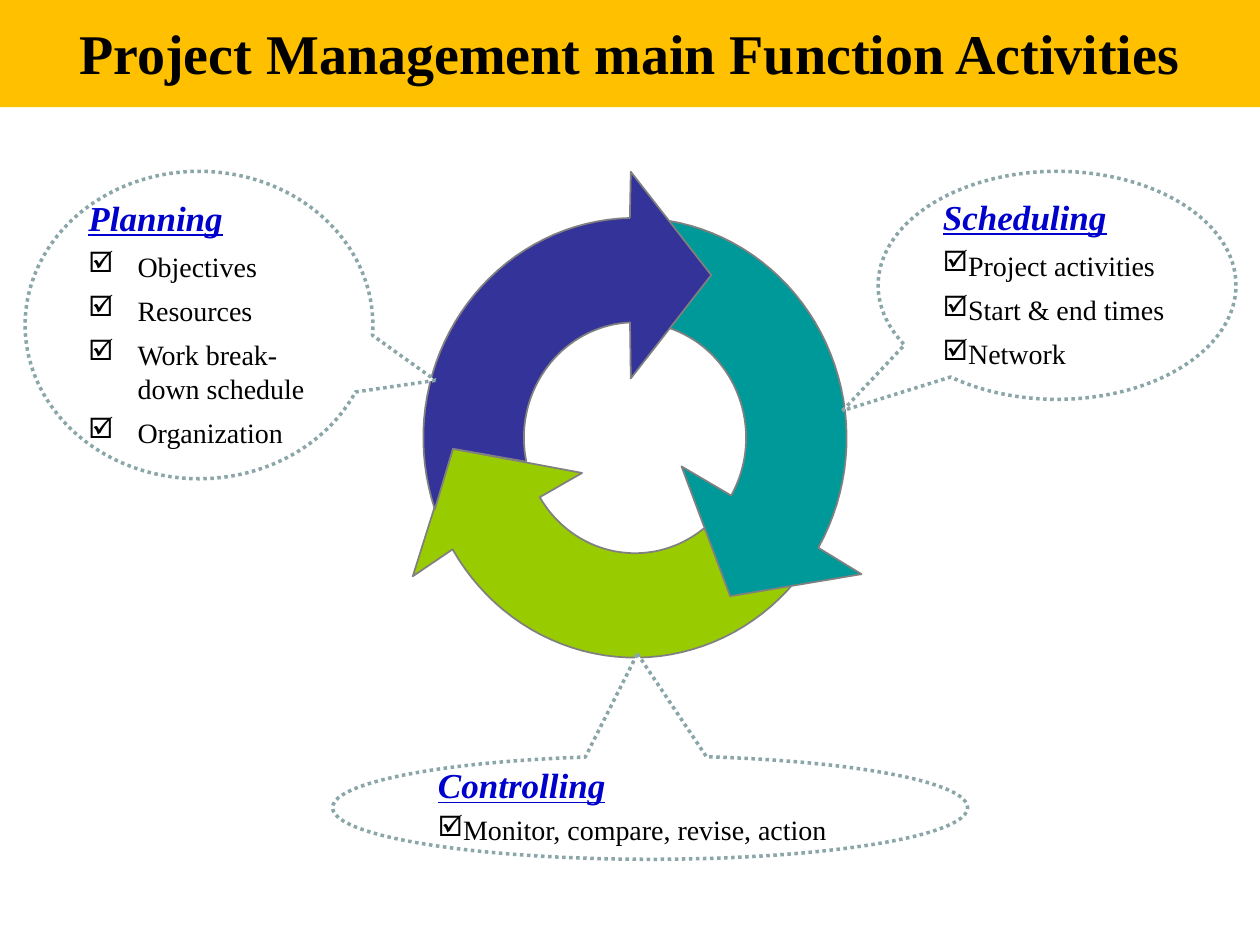
import math
import pptx
import pptx.util
import pptx.dml.color
import pptx.enum.dml
import pptx.enum.shapes
import pptx.enum.text
import pptx.oxml.ns
import lxml.etree

# Grid of 100 columns by 75 rows
CELL = pptx.util.Inches(0.1)
FONT = "Times New Roman"
HEADING = dict(name=FONT, size=pptx.util.Pt(20), bold=True, italic=True, underline=True)
ITEM = dict(name=FONT, size=pptx.util.Pt(16), bold=False, italic=False, underline=False)
TITLE = dict(name=FONT, size=pptx.util.Pt(32), bold=True)
INNER = 0.525  # radius of the hole as a share of the ring's radius


def rgb(value):
    return pptx.dml.color.RGBColor.from_string(value)


def grid(*cells):
    return [round(c * CELL) for c in cells]


def paint(sp, fill, line, width):
    sp.shadow.inherit = False
    sp.fill.solid()
    sp.fill.fore_color.rgb = rgb(fill)
    sp.line.color.rgb = rgb(line)
    sp.line.width = pptx.util.Pt(width)


def format_font(font, values, color):
    for name, value in values.items():
        setattr(font, name, value)
    font.color.rgb = rgb(color)


def set_indent(p, columns, bullet=None):
    pPr = p._p.get_or_add_pPr()
    pPr.set("marL", str(grid(columns)[0]))
    pPr.set("indent", str(grid(-columns)[0]))
    if bullet:
        qn = pptx.oxml.ns.qn
        color = lxml.etree.SubElement(pPr, qn("a:buClr"))
        lxml.etree.SubElement(color, qn("a:srgbClr"), val="000000")
        lxml.etree.SubElement(pPr, qn("a:buChar"), char=bullet)


def add_title(s, box, text):
    sp = s.shapes.title
    sp.left, sp.top, sp.width, sp.height = grid(*box)
    sp.fill.solid()
    sp.fill.fore_color.rgb = rgb("FFC000")
    tf = sp.text_frame
    tf.auto_size = pptx.enum.text.MSO_AUTO_SIZE.NONE
    tf.vertical_anchor = pptx.enum.text.MSO_ANCHOR.MIDDLE
    p = tf.paragraphs[0]
    p.alignment = pptx.enum.text.PP_ALIGN.CENTER
    r = p.add_run()
    r.text = text
    format_font(r.font, TITLE, "000000")


def arc(start, end, radius=1, steps=36):
    angles = [math.radians(start + (end - start) * i / steps) for i in range(steps + 1)]
    return [(radius * math.cos(a), radius * math.sin(a)) for a in angles]


def add_ring_arrow(s, box, color, outer, head, inner, tail=()):
    """Outer and inner are angles in degrees; head and tail are shares of the radius."""
    left, top, width, height = box
    points = arc(*outer) + head + arc(*inner, radius=INNER) + list(tail)
    points = [grid(left + width * (1 + x) / 2, top + height * (1 + y) / 2) for x, y in points]
    builder = s.shapes.build_freeform(*points[0])
    builder.add_line_segments(points[1:], close=True)
    paint(builder.convert_to_shape(), color, "808080", 1)


def add_callout(s, box, pointer, heading, items, indent, spacing=1.0):
    sp = s.shapes.add_shape(pptx.enum.shapes.MSO_SHAPE.OVAL_CALLOUT, *grid(*box))
    paint(sp, "FFFFFF", "8AA6A8", 2)
    sp.line.dash_style = pptx.enum.dml.MSO_LINE.ROUND_DOT
    for i, share in enumerate(pointer):
        sp.adjustments[i] = share
    tf = sp.text_frame
    tf.word_wrap = True
    tf.vertical_anchor = pptx.enum.text.MSO_ANCHOR.MIDDLE
    for i, text in enumerate([heading] + items):
        p = tf.add_paragraph() if i else tf.paragraphs[0]
        set_indent(p, indent, "☑" if i else None)
        p.alignment = pptx.enum.text.PP_ALIGN.LEFT
        p.line_spacing = spacing if i else 0.9
        p.space_before = pptx.util.Pt(6 if i else 0)
        r = p.add_run()
        r.text = text
        format_font(r.font, ITEM if i else HEADING, "000000" if i else "0000CC")


def main():
    prs = pptx.Presentation()
    prs.slide_width, prs.slide_height = grid(100, 75)
    s = prs.slides.add_slide(prs.slide_layouts[5])
    add_title(s, (0, -0.3, 100, 8.8), "Project Management main Function Activities")

    # Ring of three arrows
    ring = (33.6, 17.3, 33.6, 34.9)
    add_ring_arrow(s, ring, "99CC00", (41, 149.5),
                   [(-1.05, 0.63), (-0.86, 0.05), (-0.25, 0.16)], (149, 52))
    add_ring_arrow(s, ring, "009999", (-81, 30),
                   [(1.07, 0.62), (0.45, 0.72), (0.22, 0.13)], (30, -72))
    add_ring_arrow(s, ring, "333399", (161, 268.6),
                   [(-0.02, -1.21), (0.36, -0.74), (-0.02, -0.27)], (267.4, 168),
                   [(-0.86, 0.05)])

    # Callouts around the ring
    add_callout(s, (2, 13.6, 27.6, 24.4), (0.68, 0.18), "Planning",
                ["Objectives", "Resources", "Work break-down schedule", "Organization"], 3.9)
    add_callout(s, (69.7, 13.6, 28.4, 18.1), (-0.6, 0.55), "Scheduling",
                ["Project activities", "Start & end times", "Network"], 2)
    add_callout(s, (26.4, 60, 50.4, 8.2), (-0.02, -1.49), "Controlling",
                ["Monitor, compare, revise, action"], 2, spacing=0.9)
    prs.save("out.pptx")


if __name__ == "__main__":
    main()
